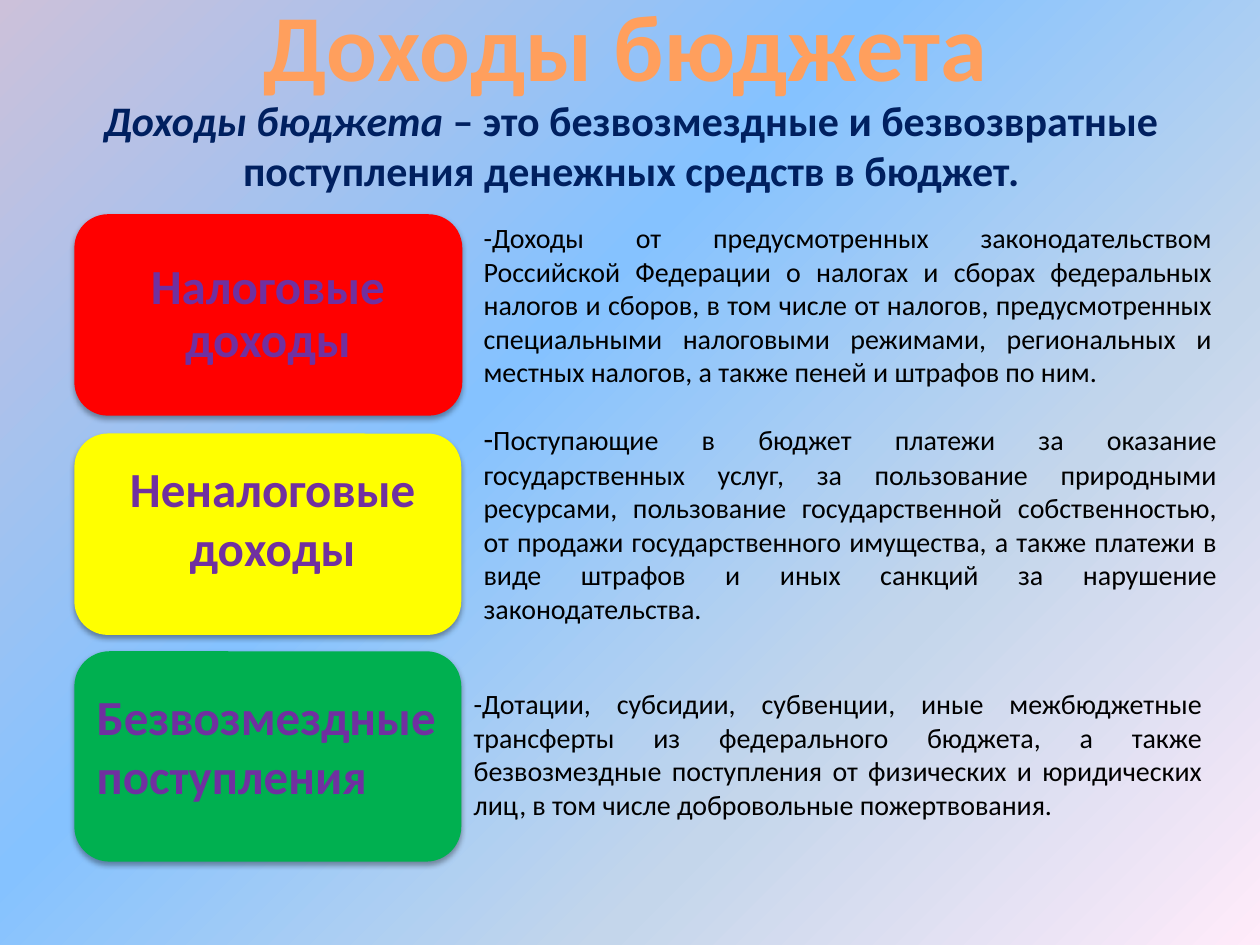
"""Build a slide that explains the three kinds of budget revenue."""
from dataclasses import dataclass

from pptx import Presentation
from pptx import oxml
from pptx import util as u
from pptx.dml import color as dml
from pptx.enum import shapes, text
from pptx.oxml import ns


@dataclass(frozen=True)
class Theme:
    """Colours and type sizes of the slide."""

    font: str = "Calibri"
    title: str = "FF9F5D"
    definition: str = "002060"
    label: str = "7030A0"
    note: str = "000000"
    shadow: str = "000000"
    backdrop: tuple = ((0, "CCC1DA"), (40, "85C2FF"), (70, "C4D6EB"), (100, "FFEBFA"))
    title_size: int = 54
    definition_size: int = 24
    label_size: int = 28
    dash_size: int = 18
    note_size: int = 16


THEME = Theme()
ALIGN = text.PP_ALIGN

DEFINITION = [
    [("Доходы бюджета ", {"italic": True}), ("– это безвозмездные и безвозвратные", {})],
    [("поступления денежных средств в бюджет.", {})],
]

CARDS = [
    {
        "fill": "FF0000", "card": (1.5, 4.32, 7.82, 4.06),
        "label": "Налоговые доходы", "label_at": (1.68, 4.52, 7.44, 3.66),
        "label_format": {"align": ALIGN.CENTER, "spacing": 0.9, "middle": True},
        "note": "Доходы от предусмотренных законодательством Российской Федерации "
                "о налогах и сборах федеральных налогов и сборов, в том числе от налогов, "
                "предусмотренных специальными налоговыми режимами, региональных и местных "
                "налогов, а также пеней и штрафов по ним.",
        "note_at": (9.5, 4.32, 15.19, 3.68), "dash_size": THEME.note_size,
    },
    {
        "fill": "FFFF00", "card": (1.5, 8.74, 7.8, 4.06),
        "label": "Неналоговые доходы", "label_at": (1.7, 9.12, 7.59, 2.64),
        "label_format": {"align": ALIGN.CENTER},
        "note": "Поступающие в бюджет платежи за оказание государственных услуг, "
                "за пользование природными ресурсами, пользование государственной "
                "собственностью, от продажи государственного имущества, а также платежи "
                "в виде штрафов и иных санкций за нарушение законодательства.",
        "note_at": (9.5, 8.33, 15.29, 4.45), "dash_size": THEME.dash_size,
    },
    {
        "fill": "00B050", "card": (1.5, 13.13, 7.8, 4.24),
        "label": "Безвозмездные поступления", "label_at": (1.7, 13.72, 8.2, 2.64),
        "label_format": {"align": ALIGN.LEFT},
        "note": "Дотации, субсидии, субвенции, иные межбюджетные трансферты "
                "из федерального бюджета, а также безвозмездные поступления от физических "
                "и юридических лиц, в том числе добровольные пожертвования.",
        "note_at": (9.3, 13.72, 15.19, 3), "dash_size": THEME.note_size,
    },
]


def write(box, paragraphs, *, size, color, bold=False, align=ALIGN.LEFT,
          spacing=None, middle=False):
    """Fill a box with paragraphs made of (words, format) spans."""
    frame = box.text_frame
    frame.word_wrap = True
    frame.auto_size = text.MSO_AUTO_SIZE.NONE
    frame.vertical_anchor = text.MSO_ANCHOR.MIDDLE if middle else text.MSO_ANCHOR.TOP
    for index, spans in enumerate(paragraphs):
        para = frame.add_paragraph() if index else frame.paragraphs[0]
        para.alignment = align
        para.line_spacing = spacing
        for words, extra in spans:
            span = para.add_run()
            span.text = words
            span.font.name = THEME.font
            span.font.size = u.Pt(extra.get("size", size))
            span.font.bold = bold
            span.font.italic = extra.get("italic", False)
            span.font.color.rgb = dml.RGBColor.from_string(color)


def add_text(page, place, paragraphs, **style):
    """Add a text box at a place given in centimetres."""
    box = page.shapes.add_textbox(*map(u.Cm, place))
    write(box, paragraphs, **style)


def paint_background(page):
    """Give the page its diagonal gradient."""
    stops = "".join(
        f'<a:gs pos="{share * 1000}"><a:srgbClr val="{color}"/></a:gs>'
        for share, color in THEME.backdrop
    )
    page.element.cSld.insert(0, oxml.parse_xml(
        f'<p:bg {ns.nsdecls("p", "a")}><p:bgPr><a:gradFill rotWithShape="1">'
        f'<a:gsLst>{stops}</a:gsLst><a:lin ang="2700000" scaled="0"/></a:gradFill>'
        '<a:effectLst/></p:bgPr></p:bg>'
    ))


def add_card(page, place, fill):
    """Add a rounded card with a soft shadow below it."""
    card = page.shapes.add_shape(shapes.MSO_SHAPE.ROUNDED_RECTANGLE, *map(u.Cm, place))
    card.fill.solid()
    card.fill.fore_color.rgb = dml.RGBColor.from_string(fill)
    card.line.fill.background()
    card.shadow.inherit = False
    effects = card.element.spPr.find(ns.qn("a:effectLst"))
    effects.append(oxml.parse_xml(
        f'<a:outerShdw {ns.nsdecls("a")} blurRad="40000" dist="23000" dir="5400000" '
        f'rotWithShape="0"><a:srgbClr val="{THEME.shadow}"><a:alpha val="35000"/>'
        '</a:srgbClr></a:outerShdw>'
    ))


def add_title(page, words):
    """Move and format the title placeholder."""
    title = page.shapes.title
    title.left, title.top, title.width, title.height = map(u.Cm, (1.09, 0, 23.04, 1.78))
    write(title, [[(words, {})]], size=THEME.title_size, color=THEME.title,
          bold=True, align=ALIGN.CENTER, middle=True)


def main():
    """Build and save the deck."""
    deck = Presentation()
    deck.slide_width, deck.slide_height = u.Cm(25.4), u.Cm(19.05)
    page = deck.slides.add_slide(deck.slide_layouts.get_by_name("Title Only"))
    paint_background(page)
    add_title(page, "Доходы бюджета")
    add_text(page, (1.78, 1.78, 21.89, 2.31), DEFINITION, size=THEME.definition_size,
             color=THEME.definition, bold=True, align=ALIGN.CENTER)
    for item in CARDS:
        add_card(page, item["card"], item["fill"])
        add_text(page, item["label_at"], [[(item["label"], {})]], size=THEME.label_size,
                 color=THEME.label, bold=True, **item["label_format"])
        note = [("-", {"size": item["dash_size"]}), (item["note"], {})]
        add_text(page, item["note_at"], [note], size=THEME.note_size,
                 color=THEME.note, align=ALIGN.JUSTIFY)
    deck.save("out.pptx")


if __name__ == "__main__":
    main()
